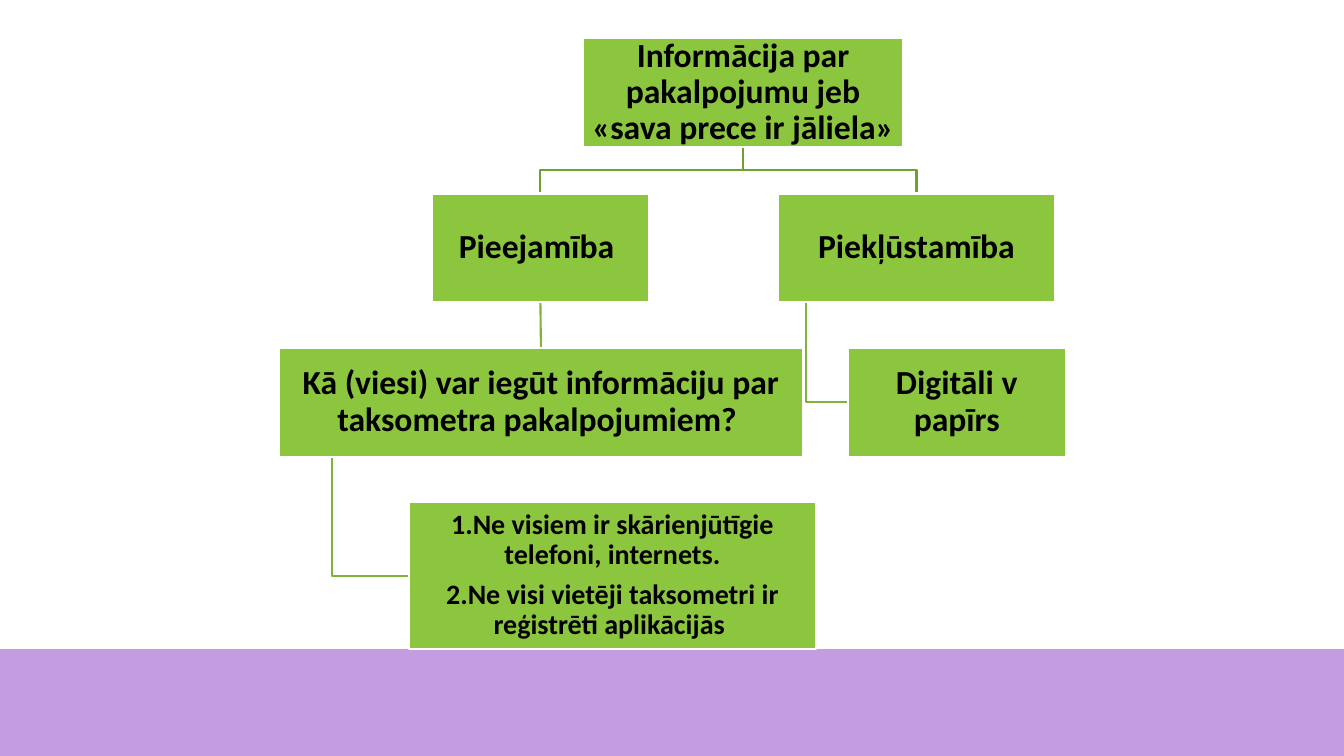
import pptx
import pptx.util
from lxml import etree
from pptx.dml.color import RGBColor
from pptx.enum.shapes import MSO_CONNECTOR, MSO_SHAPE
from pptx.enum.text import MSO_ANCHOR, PP_ALIGN
from pptx.oxml.ns import qn
from pptx.util import Inches, Pt

# Content: left, top, width, height, text size, paragraphs
TOPICS = {
    "information": (5.78, 0.38, 3.18, 1.08, 24,
                    ["Informācija par pakalpojumu jeb «sava prece ir jāliela»"]),
    "availability": (4.28, 1.92, 2.16, 1.08, 24, ["Pieejamība "]),
    "question": (2.77, 3.45, 5.19, 1.08, 24,
                 ["Kā (viesi) var iegūt informāciju par taksometra pakalpojumiem? "]),
    "obstacles": (4.06, 4.98, 4.03, 1.46, 20,
                  ["1.Ne visiem ir skārienjūtīgie telefoni, internets.",
                   "2.Ne visi vietēji taksometri ir reģistrēti aplikācijās "]),
    "accessibility": (7.72, 1.92, 2.74, 1.08, 24, ["Piekļūstamība"]),
    "formats": (8.41, 3.45, 2.16, 1.08, 24, ["Digitāli v papīrs"]),
}
BRANCHES = [("information", "accessibility"), ("information", "availability")]
HANGING = [("accessibility", "formats"), ("question", "obstacles")]
STRAIGHT = ("availability", "question")

FONT = "Calibri"
BLACK = RGBColor(0x00, 0x00, 0x00)
WHITE = RGBColor(0xFF, 0xFF, 0xFF)
GREEN = RGBColor(0x8C, 0xC6, 0x3F)
BRANCH_GREEN = RGBColor(0x70, 0x9F, 0x32)
HANGING_GREEN = RGBColor(0x7F, 0xB4, 0x39)
LILAC = RGBColor(0xC4, 0x9D, 0xE1)
LINE_WIDTH = Pt(1.5)

deck = pptx.Presentation()
deck.slide_width, deck.slide_height = Inches(13.33), Inches(7.5)
slide = deck.slides.add_slide(deck.slide_layouts[6])


def add_rectangle(left, top, width, height, fill):
    rectangle = slide.shapes.add_shape(
        MSO_SHAPE.RECTANGLE, Inches(left), Inches(top), Inches(width), Inches(height))
    rectangle.shadow.inherit = False
    rectangle.fill.solid()
    rectangle.fill.fore_color.rgb = fill
    rectangle.line.fill.background()
    return rectangle


def write_text(shape, paragraphs, size=24, color=BLACK, bold=True, inset=0.02):
    frame = shape.text_frame
    frame.word_wrap = True
    frame.vertical_anchor = MSO_ANCHOR.MIDDLE
    frame.margin_left = frame.margin_right = Inches(inset)
    frame.margin_top = frame.margin_bottom = Inches(inset)
    for index, text in enumerate(paragraphs):
        paragraph = frame.paragraphs[0] if index == 0 else frame.add_paragraph()
        paragraph.alignment = PP_ALIGN.CENTER
        paragraph.line_spacing = 0.9
        paragraph.space_after = Pt(0.35 * size)
        run = paragraph.add_run()
        run.text = text
        run.font.name, run.font.size, run.font.bold = FONT, Pt(size), bold
        run.font.color.rgb = color


def add_bent_line(points, color):
    start, *rest = [(Inches(x), Inches(y)) for x, y in points]
    builder = slide.shapes.build_freeform(*start)
    builder.add_line_segments(rest, close=False)
    bent = builder.convert_to_shape()
    bent.shadow.inherit = False
    bent.fill.background()
    bent.line.color.rgb = color
    bent.line.width = LINE_WIDTH


# Footer band
add_rectangle(0, 6.44, 13.33, 1.06, LILAC)

# Links that hang from a parent's left tenth and turn to the child's side
for parent, child in HANGING:
    left, top, width, height = TOPICS[parent][:4]
    child_left, child_top, _, child_height = TOPICS[child][:4]
    stem, middle = left + width / 10, child_top + child_height / 2
    add_bent_line([(stem, top + height), (stem, middle), (child_left, middle)],
                  HANGING_GREEN)

# Links that fork from the parent's bottom to the child's top
for parent, child in BRANCHES:
    left, top, width, height = TOPICS[parent][:4]
    child_left, child_top, child_width = TOPICS[child][:3]
    start, end = left + width / 2, child_left + child_width / 2
    bottom = top + height
    turn = (bottom + child_top) / 2
    add_bent_line([(start, bottom), (start, turn), (end, turn), (end, child_top)],
                  BRANCH_GREEN)

# Straight link, placed behind the boxes and joined to them below
straight_link = slide.shapes.add_connector(MSO_CONNECTOR.STRAIGHT, 0, 0, 0, 0)
straight_link.line.color.rgb = HANGING_GREEN
straight_link.line.width = LINE_WIDTH
etree.SubElement(straight_link._element.spPr, qn("a:effectLst"))

# Topic boxes
boxes = {}
for topic, (left, top, width, height, size, paragraphs) in TOPICS.items():
    box = add_rectangle(left, top, width, height, GREEN)
    box.line.color.rgb = WHITE
    box.line.width = LINE_WIDTH
    write_text(box, paragraphs, size=size)
    boxes[topic] = box

upper, lower = STRAIGHT
straight_link.begin_connect(boxes[upper], 2)
straight_link.end_connect(boxes[lower], 0)

deck.save("out.pptx")
